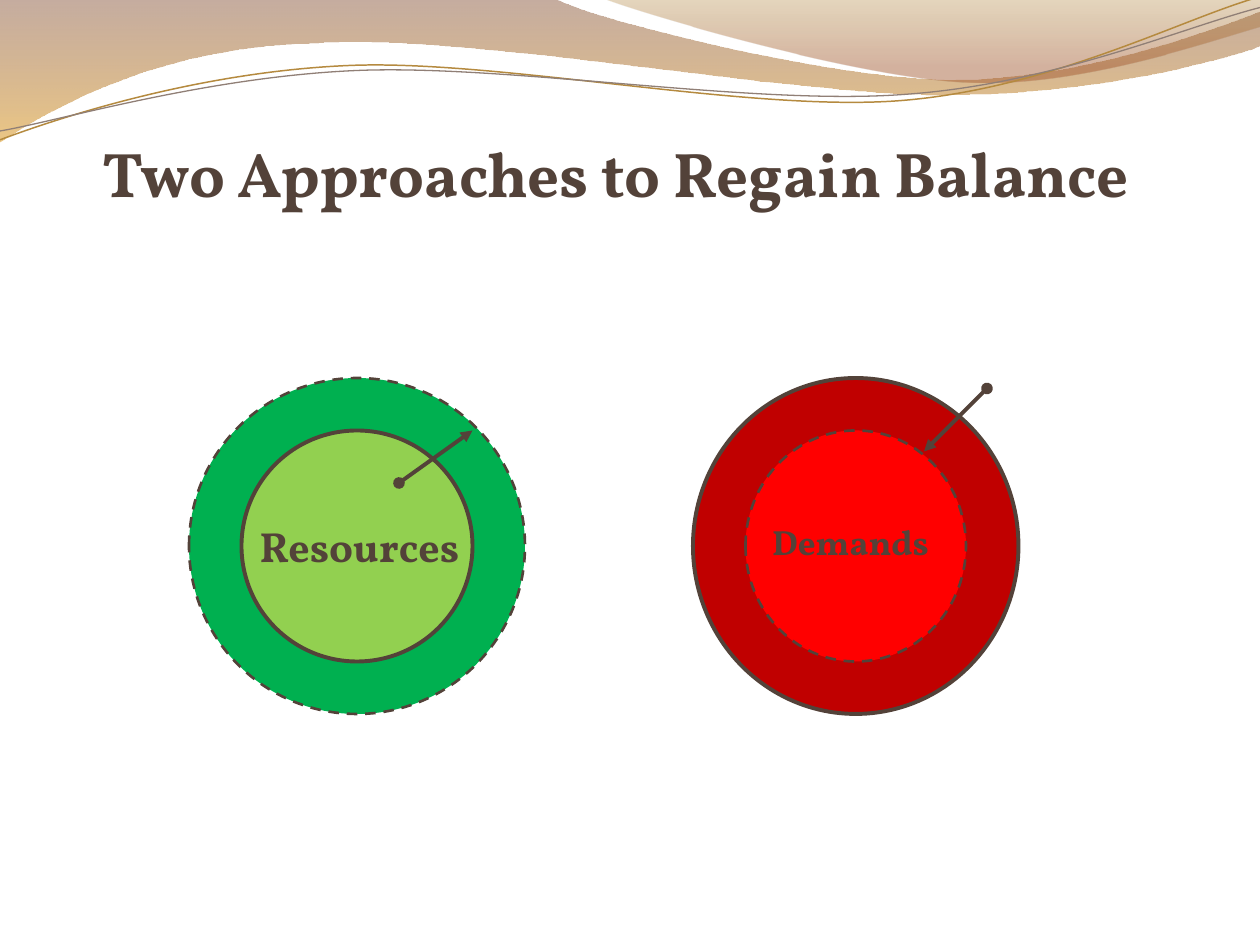
import math

from lxml import etree
from pptx import Presentation
from pptx.dml.color import RGBColor
from pptx.enum import dml, shapes, text
from pptx.oxml.ns import qn
from pptx.util import Inches, Pt

WIDTH, HEIGHT = 10, 7.5
CELL = WIDTH / 120
FONT = "Vollkorn"
TILT = 357.3
COLOURS = {
    "ink": "534239", "green": "00B050", "lime": "92D050",
    "crimson": "C00000", "red": "FF0000", "gold": "B58A3F", "taupe": "907F76",
    "brown": "80492C", "amber": "DB971F", "ochre": "A77726", "rust": "A1552C",
}
WAVES = [
    ([(0, 0), (4.4, -0.01), (4.76, 0.17, 6.64, 0.63, 7.58, 0.63),
      (8.53, 0.63, 9.58, 0.26, 10, 0.09), (10.01, 0.36),
      (9.83, 0.44, 8.7, 0.76, 7.46, 0.75), (6.22, 0.75, 3.82, 0.28, 2.57, 0.34),
      (1.29, 0.36, 0.46, 0.83, -0.01, 1.13)],
     [(0, "brown", 45), (1, "amber", 55)]),
    ([(4.79, -0.01), (5.09, 0.11, 6.82, 0.62, 7.69, 0.65),
      (8.56, 0.69, 9.61, 0.32, 10, 0.21), (10, 0)],
     [(0, "ochre", 30), (0.8, "rust", 45)]),
]
STRANDS = [
    ([(0, 1.11), (0.48, 0.93, 1.58, 0.57, 2.77, 0.52),
      (3.95, 0.47, 5.93, 0.89, 7.13, 0.8), (8.33, 0.71, 9.38, 0.15, 9.98, -0.02)],
     (4.99, 0.57), "gold", 0.85),
    ([(0, 1.04), (0.47, 0.96, 1.64, 0.61, 2.83, 0.56),
      (4.03, 0.51, 5.97, 0.84, 7.17, 0.75), (8.36, 0.67, 9.41, 0.21, 10, 0.06)],
     (5, 0.59), "taupe", 0.75),
]


def colour(name):
    """Return the named colour."""
    return RGBColor.from_string(COLOURS[name])


def cells(*counts):
    """Turn counts of grid cells into lengths."""
    return [Inches(count * CELL) for count in counts]


def apply(target, values):
    """Set every attribute in a dict of format values."""
    for name, value in values.items():
        setattr(target, name, value)


def draw_line(line, name, width, dash=None):
    """Format an outline or a connector line."""
    line.color.rgb = colour(name)
    apply(line, {"width": Pt(width), "dash_style": dash})


def write(frame, wording, size, align, **layout):
    """Put one bold paragraph in a text frame."""
    apply(frame, {"word_wrap": True, **layout})
    para = frame.paragraphs[0]
    para.alignment = align
    span = para.add_run()
    span.text = wording
    apply(span.font, {"name": FONT, "size": Pt(size), "bold": True})
    span.font.color.rgb = colour("ink")


def turn(pieces, pivot, degrees):
    """Rotate every point of the pieces clockwise about a pivot."""
    cosine, sine = math.cos(math.radians(degrees)), math.sin(math.radians(degrees))
    turned = []
    for piece in pieces:
        flat = []
        for x, y in zip(piece[::2], piece[1::2]):
            across, down = x - pivot[0], y - pivot[1]
            flat += [pivot[0] + across * cosine - down * sine,
                     pivot[1] + across * sine + down * cosine]
        turned.append(tuple(flat))
    return turned


def add_curve(page, pieces, close):
    """Add a freeform of straight and cubic pieces."""
    pieces = [[Inches(value) for value in piece] for piece in pieces]
    builder = page.shapes.build_freeform(*pieces[0])
    builder.add_line_segments([piece[-2:] for piece in pieces[1:]], close=close)
    curve = builder.convert_to_shape()
    curve.shadow.inherit = False
    segments = list(curve.element.spPr.iter(qn("a:lnTo")))
    for segment, piece in zip(segments, pieces[1:]):
        if len(piece) == 6:
            bend = etree.Element(qn("a:cubicBezTo"))
            for x, y in zip(piece[::2], piece[1::2]):
                etree.SubElement(bend, qn("a:pt"),
                                 x=str(x - curve.left), y=str(y - curve.top))
            segment.getparent().replace(segment, bend)
    return curve


def add_banner(page):
    """Draw the shaded waves and thin strands along the top."""
    for pieces, stops in WAVES:
        wave = add_curve(page, pieces, True)
        wave.line.fill.background()
        wave.fill.gradient()
        wave.fill.gradient_angle = 270
        for stop, (position, name, _) in zip(wave.fill.gradient_stops, stops):
            stop.position = position
            stop.color.rgb = colour(name)
        tints = wave.element.spPr.iter(qn("a:srgbClr"))
        for tint, (_, _, opacity) in zip(tints, stops):
            etree.SubElement(tint, qn("a:alpha"), val=str(opacity * 1000))
    for pieces, pivot, name, width in STRANDS:
        strand = add_curve(page, turn(pieces, pivot, -TILT), False)
        strand.rotation = TILT
        strand.fill.background()
        draw_line(strand.line, name, width)


def add_title(page, wording):
    """Place and format the title placeholder."""
    title = page.shapes.title
    apply(title, dict(zip(("left", "top", "width", "height"), cells(3, 11, 111.25, 9))))
    write(title.text_frame, wording, 36, text.PP_ALIGN.CENTER,
          vertical_anchor=text.MSO_ANCHOR.BOTTOM, auto_size=text.MSO_AUTO_SIZE.NONE,
          margin_left=0, margin_right=0, margin_top=Inches(0.05), margin_bottom=0)


def add_arrow(page, start, end):
    """Add an arrow with a round tail."""
    arrow = page.shapes.add_connector(
        shapes.MSO_CONNECTOR.STRAIGHT, *cells(*start), *cells(*end))
    draw_line(arrow.line, "ink", 2.25)
    outline = arrow.element.spPr.find(qn("a:ln"))
    for tag, kind in (("a:headEnd", "oval"), ("a:tailEnd", "triangle")):
        etree.SubElement(outline, qn(tag), type=kind)
    etree.SubElement(arrow.element.spPr, qn("a:effectLst"))


def add_disc(page, box, fills, dashed, label, arrow):
    """Draw two nested circles with a label and an arrow, relative to a box."""
    left, top, width, height = box
    for index, name in enumerate(fills):
        inset = 5 * index
        ring = page.shapes.add_shape(shapes.MSO_SHAPE.OVAL, *cells(
            left + inset, top + inset, width - 2 * inset, height - 2 * inset))
        ring.shadow.inherit = False
        ring.fill.solid()
        ring.fill.fore_color.rgb = colour(name)
        if index == dashed:
            draw_line(ring.line, "ink", 1.5, dml.MSO_LINE.DASH)
        else:
            draw_line(ring.line, "ink", 2.25)
    wording, size, align, indent, span_width, span_height = label
    caption = page.shapes.add_textbox(
        *cells(left + indent, top + 13, span_width, span_height))
    write(caption.text_frame, wording, size, align,
          auto_size=text.MSO_AUTO_SIZE.SHAPE_TO_FIT_TEXT)
    add_arrow(page, *[(left + x, top + y) for x, y in arrow])


def main():
    """Build and save the slide."""
    deck = Presentation()
    apply(deck, {"slide_width": Inches(WIDTH), "slide_height": Inches(HEIGHT)})
    page = deck.slides.add_slide(deck.slide_layouts[5])
    add_banner(page)
    add_title(page, "Two Approaches to Regain Balance")
    add_disc(page, (66, 36, 31, 32), ("crimson", "red"), 1,
             ("Demands", 20, text.PP_ALIGN.CENTER, 6, 18, 5.25), ((28, 1), (22, 7)))
    add_disc(page, (18, 36, 32, 32), ("green", "lime"), 0,
             ("Resources", 24, text.PP_ALIGN.LEFT, 5.55, 22, 6), ((20, 10), (27, 5)))
    deck.save("out.pptx")


if __name__ == "__main__":
    main()
